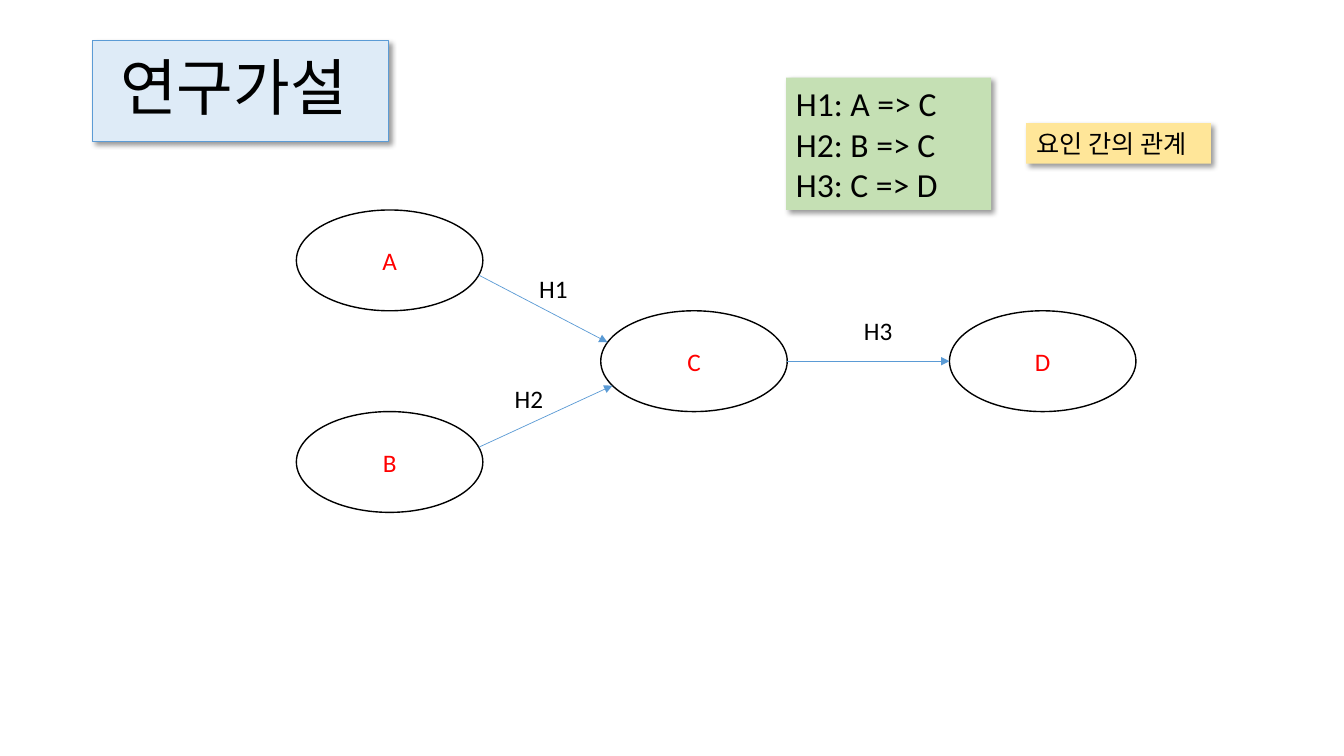
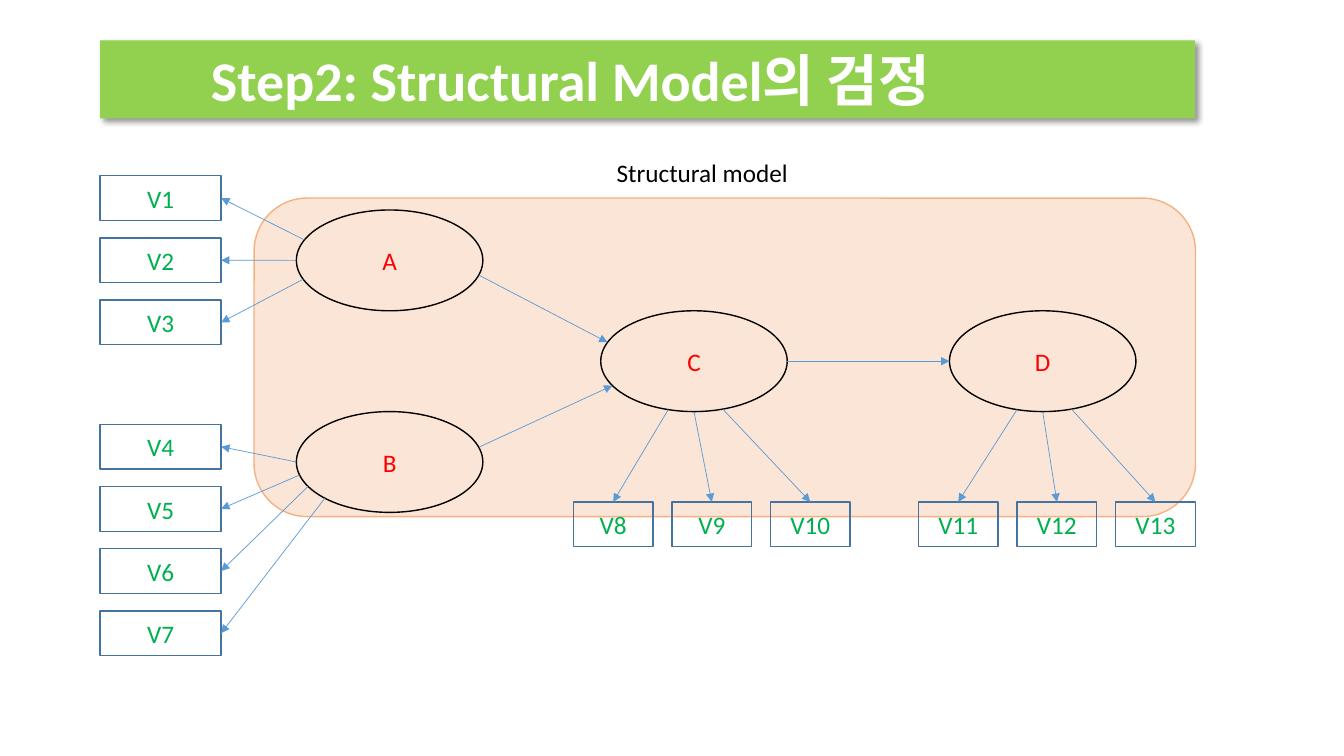
from math import cos, radians, sin

from lxml.etree import SubElement as Sub
from pptx import Presentation
from pptx.dml.color import RGBColor
from pptx.enum.shapes import MSO_CONNECTOR as Conn, MSO_SHAPE as Kind
from pptx.enum.text import MSO_ANCHOR as Anchor, MSO_AUTO_SIZE as Auto, PP_ALIGN as Align
from pptx.oxml.ns import qn
from pptx.util import Pt

FONT = "Calibri"
HEX = {
    "black": "000000", "white": "FFFFFF", "red": "FF0000", "green": "00B050",
    "arrow": "5B9BD5", "frame": "43739E", "title": "DEEBF7", "band": "92D050",
    "hypo": "C5E0B4", "note": "FFE699", "model": "FBE5D6", "edge": "F4B183",
}

OVAL_W, OVAL_H = 133.2, 72
OVALS = {"A": (211.7, 150), "B": (211.7, 294), "C": (429.1, 222), "D": (678.2, 222)}
# Factor, angle where the path leaves, factor, angle where it arrives
PATHS = [("A", 17, "C", 202), ("B", -17, "C", 151), ("C", 0, "D", 180)]

SIDE_X, SIDE_Y, SIDE_STEP, SIDE_W = 71.5, 125.5, 44.4, 86.5
FOOT_Y, FOOT_STEP, FOOT_W = 358.5, 70.4, 57
ITEM_H = 32
# Factor, first row, first item number, angles of its arrows
SIDES = [("A", 0, 1, (204, 180, 158)), ("B", 4, 4, (180, 165, 151, 134))]
# Factor, left of first item, first item number
FEET = [("C", 409.5, 8), ("D", 656, 11)]
FOOT_ANGLES = (106, 90, 72)


def color(name):
    return RGBColor.from_string(HEX[name])


def paint(shape, fill=None, line=None, width=1):
    shape.shadow.inherit = False
    if fill:
        shape.fill.solid()
        shape.fill.fore_color.rgb = color(fill)
    else:
        shape.fill.background()
    if line:
        shape.line.color.rgb = color(line)
        shape.line.width = Pt(width)
    else:
        shape.line.fill.background()


def shade(shape):
    """Give a painted shape a soft shadow to the lower right."""
    group = shape.element.spPr.find(qn("a:effectLst"))
    cast = Sub(group, qn("a:outerShdw"), blurRad=str(Pt(4)), dist=str(Pt(3)),
               dir="2700000", algn="tl", rotWithShape="0")
    tint = Sub(cast, qn("a:srgbClr"), val=HEX["black"])
    Sub(tint, qn("a:alpha"), val="40000")


def write(shape, lines, tone="black", size=18, align=Align.LEFT, bold=False):
    frame = shape.text_frame
    for i, line in enumerate(lines):
        para = frame.add_paragraph() if i else frame.paragraphs[0]
        para.alignment = align
        run = para.add_run()
        run.text = line
        font = run.font
        font.name, font.size, font.bold = FONT, Pt(size), bold
        font.color.rgb = color(tone)
    return frame


def add_box(slide, kind, box, fill=None, line=None):
    shape = slide.shapes.add_shape(kind, *map(Pt, box))
    paint(shape, fill, line)
    return shape


def add_title(slide, box, text, fill, line=None, **style):
    title = slide.shapes.title
    title.left, title.top, title.width, title.height = map(Pt, box)
    paint(title, fill, line, 0.75)
    shade(title)
    frame = write(title, [text], **style)
    frame.auto_size = Auto.NONE
    frame.vertical_anchor = Anchor.MIDDLE
    return frame


def add_card(slide, box, lines, fill, size):
    card = add_box(slide, Kind.RECTANGLE, box, fill)
    shade(card)
    write(card, lines, size=size)


def add_label(slide, box, text):
    label = slide.shapes.add_textbox(*map(Pt, box))
    write(label, [text]).word_wrap = False


def add_item(slide, number, x, y, width):
    item = add_box(slide, Kind.RECTANGLE, (x, y, width, ITEM_H), line="frame")
    write(item, [f"V{number}"], "green", align=Align.CENTER)
    return item


def add_arrow(slide, start, end):
    arrow = slide.shapes.add_connector(Conn.STRAIGHT, *map(Pt, start + end))
    arrow.line.color.rgb = color("arrow")
    arrow.line.width = Pt(0.5)
    Sub(arrow.line._get_or_add_ln(), qn("a:tailEnd"), type="triangle")
    Sub(arrow.element.spPr, qn("a:effectLst"))
    return arrow


def rim(name, angle):
    """Point on a factor's outline, clockwise in degrees from its right end."""
    x, y = OVALS[name]
    turn = radians(angle)
    return (x + OVAL_W / 2 * (1 + cos(turn)), y + OVAL_H / 2 * (1 + sin(turn)))


def link(slide, name, angle, item, site):
    start = rim(name, angle)
    add_arrow(slide, start, start).end_connect(item, site)


def add_model(slide):
    for name, spot in OVALS.items():
        oval = add_box(slide, Kind.OVAL, (*spot, OVAL_W, OVAL_H), line="black")
        write(oval, [name], "red", align=Align.CENTER)
    for source, leave, target, arrive in PATHS:
        add_arrow(slide, rim(source, leave), rim(target, arrive))


def add_items(slide):
    for name, row, first, angles in SIDES:
        for i, angle in enumerate(angles):
            y = SIDE_Y + (row + i) * SIDE_STEP
            item = add_item(slide, first + i, SIDE_X, y, SIDE_W)
            link(slide, name, angle, item, 3)
    for name, left, first in FEET:
        for i, angle in enumerate(FOOT_ANGLES):
            item = add_item(slide, first + i, left + i * FOOT_STEP, FOOT_Y, FOOT_W)
            link(slide, name, angle, item, 0)


def hypotheses(slide):
    frame = add_title(slide, (66, 28.8, 211.7, 72), "연구가설 ", "title", "arrow",
                      size=44, align=Align.CENTER)
    frame.paragraphs[0].line_spacing = 0.9
    add_model(slide)
    for text, x, y in [("H1", 378, 191.5), ("H2", 360.5, 270), ("H3", 610, 221.8)]:
        add_label(slide, (x, y, 35.3, 29), text)
    rules = ["H1: A => C", "H2: B => C", "H3: C => D"]
    add_card(slide, (561.5, 55.5, 146.5, 94.5), rules, "hypo", 24)
    add_card(slide, (733, 88, 132, 29), ["요인 간의 관계"], "note", 18)


def structure(slide):
    frame = add_title(slide, (71.5, 28.8, 782, 55.7), "Step2: Structural Model의 검정",
                      "band", tone="white", size=40, bold=True)
    frame.margin_left = Pt(79.2)
    add_box(slide, Kind.ROUNDED_RECTANGLE, (181.5, 141.5, 672.5, 227.5), "model", "edge")
    add_model(slide)
    add_items(slide)
    add_label(slide, (433.4, 108.7, 138.2, 29), "Structural model")


def main():
    deck = Presentation()
    deck.slide_width, deck.slide_height = Pt(960), Pt(540)
    for build in (hypotheses, structure):
        build(deck.slides.add_slide(deck.slide_layouts[5]))
    deck.save("out.pptx")


if __name__ == "__main__":
    main()
